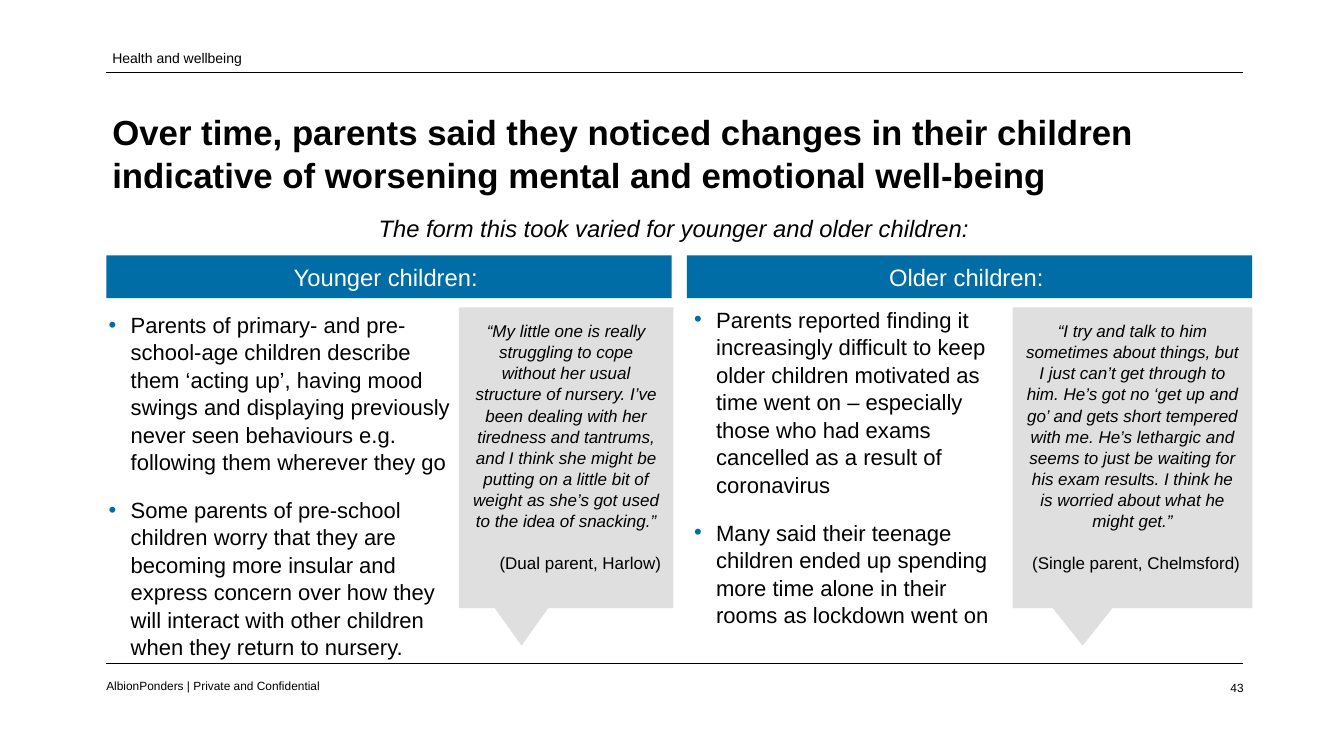
from lxml import etree
from pptx import Presentation
from pptx import util as u
from pptx.dml.color import RGBColor
from pptx.enum import shapes, text
from pptx.oxml.ns import qn

W, H = 21.99, 12.37
BLUE, GREY, BLACK, WHITE = "006DA6", "DFDFDF", "000000", "FFFFFF"
LEFT, CENTER, RIGHT = text.PP_ALIGN.LEFT, text.PP_ALIGN.CENTER, text.PP_ALIGN.RIGHT
MIDDLE = text.MSO_ANCHOR.MIDDLE
HEADER_Y, HEADER_H = 33.79, 5.66
QUOTE_Y, QUOTE_H = 40.66, 39.77
BULLETS_H = 46.48
FOOTER_Y, LABEL_H = 89.98, 2.67


def color(hex_string):
    return RGBColor.from_string(hex_string)


def x(share):
    return u.Inches(W * share / 100)


def y(share):
    return u.Inches(H * share / 100)


def box(left, top, width, height):
    return x(left), y(top), x(width), y(height)


def add_bullet(p):
    pPr = p._p.get_or_add_pPr()
    pPr.set("marL", str(u.Inches(0.36)))
    pPr.set("indent", str(-u.Inches(0.36)))
    clr = etree.SubElement(pPr, qn("a:buClr"))
    etree.SubElement(clr, qn("a:srgbClr"), val=BLUE)
    etree.SubElement(pPr, qn("a:buFont"), typeface="Arial")
    etree.SubElement(pPr, qn("a:buChar"), char="•")


def write(p, words, size=20, fill=BLACK, align=LEFT, bold=False, italic=False,
          spaced=False, bullet=False, leading=1.04):
    p.alignment = align
    p.line_spacing = leading
    if spaced:
        p.space_before, p.space_after = u.Pt(18), u.Pt(6)
    if bullet:
        add_bullet(p)
    r = p.add_run()
    r.text = words
    f = r.font
    f.name, f.size, f.bold, f.italic = "Arial", u.Pt(size), bold, italic
    f.color.rgb = color(fill)


class Deck:
    def __init__(self):
        self.prs = Presentation()
        self.prs.slide_width, self.prs.slide_height = u.Inches(W), u.Inches(H)
        self.s = self.prs.slides.add_slide(self.prs.slide_layouts[6])

    def frame(self, sp, anchor=text.MSO_ANCHOR.TOP, inset=None):
        tf = sp.text_frame
        tf.word_wrap = True
        tf.vertical_anchor = anchor
        if inset is not None:
            tf.margin_left = tf.margin_right = u.Inches(inset)
            tf.margin_top = tf.margin_bottom = u.Inches(inset)
        return tf

    def rule(self, top):
        ln = self.s.shapes.add_connector(shapes.MSO_CONNECTOR.STRAIGHT,
                                         x(7.87), y(top), x(92.45), y(top))
        ln.line.color.rgb = color(BLACK)
        ln.line.width = u.Pt(0.75)
        etree.SubElement(ln._element.spPr, qn("a:effectLst"))

    def label(self, place, words, anchor=text.MSO_ANCHOR.TOP, inset=None, **fmt):
        sp = self.s.shapes.add_textbox(*box(*place))
        write(self.frame(sp, anchor, inset).paragraphs[0], words, **fmt)

    def block(self, kind, place, fill):
        sp = self.s.shapes.add_shape(kind, *box(*place))
        sp.shadow.inherit = False
        sp.fill.solid()
        sp.fill.fore_color.rgb = color(fill)
        sp.line.fill.background()
        return sp

    def header(self, left, words):
        sp = self.block(shapes.MSO_SHAPE.RECTANGLE, (left, HEADER_Y, 42.06, HEADER_H), BLUE)
        write(self.frame(sp, MIDDLE).paragraphs[0], words, size=28, fill=WHITE,
              align=CENTER, spaced=True)

    def bullets(self, left, top, width, size, items):
        sp = self.s.shapes.add_textbox(*box(left, top, width, BULLETS_H))
        tf = self.frame(sp)
        for i, item in enumerate(items):
            p = tf.add_paragraph() if i else tf.paragraphs[0]
            write(p, item, size=size, spaced=True, bullet=True)

    def quote(self, left, width, words, speaker):
        sp = self.block(shapes.MSO_SHAPE.RECTANGULAR_CALLOUT,
                        (left, QUOTE_Y, width, QUOTE_H), GREY)
        tf = self.frame(sp, inset=0.2)
        write(tf.paragraphs[0], words, align=CENTER, italic=True, spaced=True)
        write(tf.add_paragraph(), speaker, align=RIGHT, spaced=True)


def main():
    d = Deck()
    d.rule(87.71)
    d.rule(9.54)
    d.label((7.91, 6.22, 46.98, LABEL_H), "Health and wellbeing", MIDDLE, size=16.5)
    d.label((7.91, 13.99, 84.63, 12.45),
            "Over time, parents said they noticed changes in their children "
            "indicative of worsening mental and emotional well-being", size=41, bold=True)
    d.label((7.64, 27.73, 84.95, 4.69),
            "The form this took varied for younger and older children:",
            MIDDLE, 0.2, size=28, align=CENTER, italic=True, spaced=True)

    d.header(7.91, "Younger children: ")
    d.bullets(7.64, 40.66, 26.51, 25.9, [
        "Parents of primary- and pre-school-age children describe them ‘acting up’, "
        "having mood swings and displaying previously never seen behaviours e.g. "
        "following them wherever they go",
        "Some parents of pre-school children worry that they are becoming more insular "
        "and express concern over how they will interact with other children when they "
        "return to nursery."])
    d.quote(34.15, 15.96,
            "“My little one is really struggling to cope without her usual structure of "
            "nursery. I’ve been dealing with her tiredness and tantrums, and I think she "
            "might be putting on a little bit of weight as she’s got used to the idea of "
            "snacking.”", "(Dual parent, Harlow)")

    d.header(51.11, "Older children: ")
    d.bullets(51.2, 39.94, 23.06, 26, [
        "Parents reported finding it increasingly difficult to keep older children "
        "motivated as time went on – especially those who had exams cancelled as a "
        "result of coronavirus",
        "Many said their teenage children ended up spending more time alone in their "
        "rooms as lockdown went on"])
    d.quote(75.35, 17.83,
            "“I try and talk to him sometimes about things, but I just can’t get through "
            "to him. He’s got no ‘get up and go’ and gets short tempered with me. He’s "
            "lethargic and seems to just be waiting for his exam results. I think he is "
            "worried about what he might get.”", "(Single parent, Chelmsford)")

    d.label((7.91, FOOTER_Y, 20.51, LABEL_H), "AlbionPonders | Private and Confidential",
            inset=0, size=14, leading=u.Pt(15.2))
    d.label((89.77, FOOTER_Y, 2.77, LABEL_H), "43", inset=0, size=14, align=RIGHT)
    d.prs.save("out.pptx")


if __name__ == "__main__":
    main()
